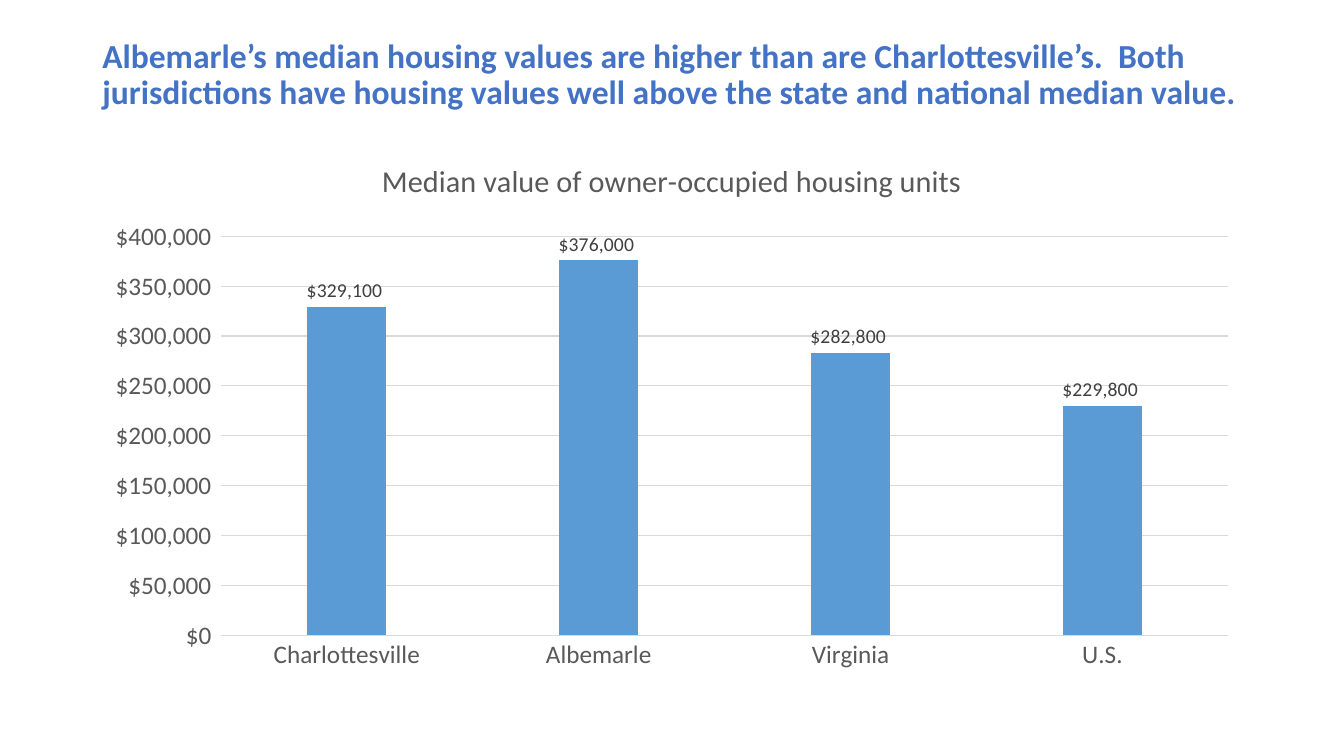
from pptx import Presentation
from pptx.chart.data import CategoryChartData
from pptx.dml.color import RGBColor
from pptx.enum.chart import XL_CHART_TYPE, XL_LABEL_POSITION, XL_TICK_MARK
from pptx.enum.text import MSO_ANCHOR
from pptx.util import Pt

COLUMNS = XL_CHART_TYPE.COLUMN_CLUSTERED
OUTSIDE_END = XL_LABEL_POSITION.OUTSIDE_END
NO_TICK = XL_TICK_MARK.NONE
MIDDLE = MSO_ANCHOR.MIDDLE

HEADLINE = (
    "Albemarle’s median housing values are higher than are Charlottesville’s.  "
    "Both jurisdictions have housing values well above the state and national median value."
)
CHART_TITLE = "Median value of owner-occupied housing units"
MEDIAN_VALUES = {
    "Charlottesville": 329100,
    "Albemarle": 376000,
    "Virginia": 282800,
    "U.S.": 229800,
}
DOLLARS = '"$"#,##0_);[Red]\\("$"#,##0\\)'
LEFT, WIDTH = 66, 828


def color(hex_code):
    return RGBColor.from_string(hex_code)


class SlideBuilder:
    font_name = "Calibri"
    headline_color = "4472C4"
    bar_color = "5B9BD5"
    axis_color = "595959"
    label_color = "404040"
    line_color = "D9D9D9"

    def __init__(self, slide):
        self.slide = slide

    def style_font(self, font, size, hex_code, bold=False):
        font.name = self.font_name
        font.size = Pt(size)
        font.bold = bold
        font.color.rgb = color(hex_code)

    def style_line(self, line):
        line.color.rgb = color(self.line_color)
        line.width = Pt(0.75)

    def add_headline(self, text, left, top, width, height):
        box = self.slide.shapes.add_textbox(Pt(left), Pt(top), Pt(width), Pt(height))
        frame = box.text_frame
        frame.word_wrap = True
        frame.vertical_anchor = MIDDLE
        frame.text = text
        para = frame.paragraphs[0]
        para.line_spacing = 0.9
        self.style_font(para.runs[0].font, 24, self.headline_color, bold=True)

    def add_column_chart(self, title, values, left, top, width, height):
        data = CategoryChartData(number_format=DOLLARS)
        data.categories = list(values)
        data.add_series(title, list(values.values()))
        chart = self.slide.shapes.add_chart(
            COLUMNS, Pt(left), Pt(top), Pt(width), Pt(height), data
        ).chart
        self.style_font(chart.font, 18, "000000")
        chart.has_legend = False
        chart.has_title = True
        chart.chart_title.include_in_layout = False
        title_frame = chart.chart_title.text_frame
        title_frame.text = title
        self.style_font(title_frame.paragraphs[0].runs[0].font, 21.6, self.axis_color)
        self.style_axes(chart)
        self.style_columns(chart.plots[0])

    def style_axes(self, chart):
        for axis in (chart.category_axis, chart.value_axis):
            axis.major_tick_mark = NO_TICK
            axis.minor_tick_mark = NO_TICK
            self.style_font(axis.tick_labels.font, 18, self.axis_color)
        self.style_line(chart.category_axis.format.line)

        value_axis = chart.value_axis
        value_axis.minimum_scale = 0
        value_axis.maximum_scale = 400000
        value_axis.major_unit = 50000
        value_axis.format.line.fill.background()
        value_axis.has_major_gridlines = True
        self.style_line(value_axis.major_gridlines.format.line)
        value_axis.tick_labels.number_format = DOLLARS
        value_axis.tick_labels.number_format_is_linked = False

    def style_columns(self, plot):
        plot.gap_width = 219
        plot.overlap = -27
        plot.vary_by_categories = False
        fill = plot.series[0].format.fill
        fill.solid()
        fill.fore_color.rgb = color(self.bar_color)

        labels = plot.series[0].data_labels
        labels.show_value = True
        labels.position = OUTSIDE_END
        labels.number_format = DOLLARS
        labels.number_format_is_linked = False
        self.style_font(labels.font, 14, self.label_color)


def main():
    deck = Presentation()
    deck.slide_width = Pt(960)
    deck.slide_height = Pt(540)
    builder = SlideBuilder(deck.slides.add_slide(deck.slide_layouts[6]))
    builder.add_headline(HEADLINE, LEFT, 28.8, WIDTH, 50.4)
    builder.add_column_chart(CHART_TITLE, MEDIAN_VALUES, LEFT, 98.6, WIDTH, 387.4)
    deck.save("out.pptx")


if __name__ == "__main__":
    main()
